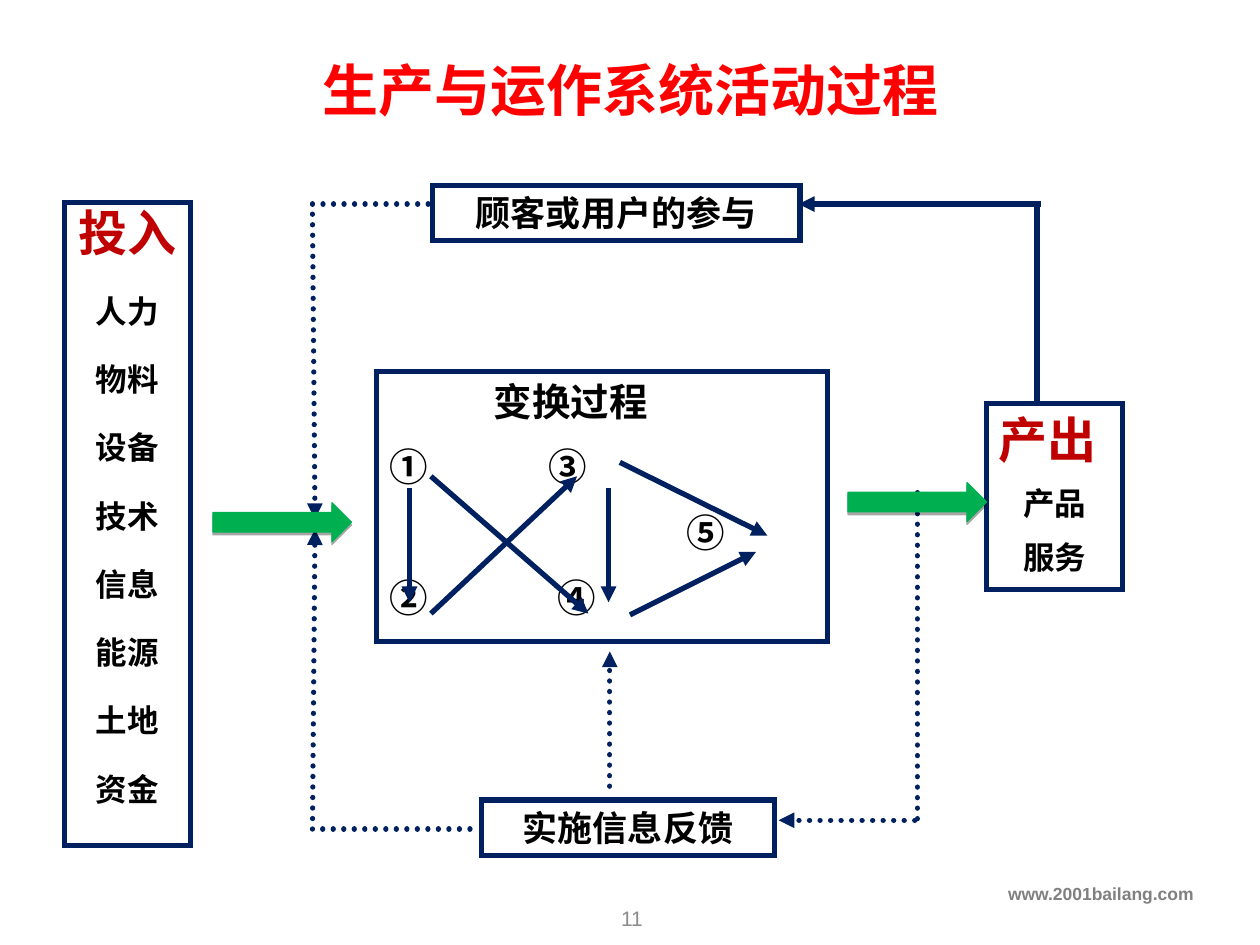
from lxml import etree
from pptx import Presentation
from pptx.dml.color import RGBColor
from pptx.enum.dml import MSO_LINE
from pptx.enum.shapes import MSO_CONNECTOR, MSO_SHAPE
from pptx.enum.text import MSO_ANCHOR, PP_ALIGN
from pptx.oxml.ns import qn
from pptx.util import Inches, Pt

LEFT, CENTER, RIGHT = PP_ALIGN.LEFT, PP_ALIGN.CENTER, PP_ALIGN.RIGHT
TOP, MIDDLE = MSO_ANCHOR.TOP, MSO_ANCHOR.MIDDLE
RECTANGLE, RIGHT_ARROW = MSO_SHAPE.RECTANGLE, MSO_SHAPE.RIGHT_ARROW
STRAIGHT = MSO_CONNECTOR.STRAIGHT
DOTTED = MSO_LINE.ROUND_DOT

SANS, CJK = "Arial", "Noto Sans CJK SC"
THEME = {
    "frame": "002060",
    "flow": "00B050",
    "shadow": "000000",
    "frame_width": 3,
    "flow_width": 0.75,
    # style: font, size, colour, bold
    "title": (CJK, 32, "FF0000", True),
    "heading": (SANS, 28, "C00000", True),
    "item": (CJK, 18, "000000", True),
    "label": (CJK, 20, "000000", True),
    "process": (CJK, 22, "000000", True),
    "website": (SANS, 10, "808080", True),
    "page": (SANS, 12, "8C8C8C", False),
}

# Paragraph: text, style, alignment, then optional indent in inches
INPUTS = ["人力", "物料", "设备", "技术", "信息", "能源", "土地", "资金"]
OUTPUTS = ["产品", "服务"]

# Frame: left, top, width, height, paragraphs, line spacing
FRAMES = [
    (0.51, 1.61, 1, 5.1,
     [("投入", "heading", CENTER)] + [(name, "item", CENTER) for name in INPUTS], 30),
    (3.43, 1.47, 2.92, 0.44, [("顾客或用户的参与", "label", CENTER)], None),
    (3.82, 6.35, 2.33, 0.44, [("实施信息反馈", "label", CENTER)], None),
    (7.83, 3.2, 1.08, 1.48,
     [("产出", "heading", LEFT)] + [(name, "item", CENTER) for name in OUTPUTS], None),
    (2.99, 2.95, 3.58, 2.14, [("变换过程", "process", LEFT, 0.83)], None),
]
ITEM_GAP = 9

# Step: number, centre x, row
STEPS = [("①", 3.24, 0), ("②", 3.24, 2), ("③", 4.51, 0), ("④", 4.58, 2), ("⑤", 5.6, 1)]
FIRST_ROW, ROW_PITCH = 3.7, 0.52
STEP_WIDTH, STEP_HEIGHT = 0.6, 0.5

# Caption: left, top, width, height, paragraph, anchor
CAPTIONS = [
    (2.25, 0.39, 5.51, 0.64, ("生产与运作系统活动过程", "title", CENTER), TOP),
    (0, 6.96, 9.57, 0.35, ("www.2001bailang.com", "website", RIGHT), TOP),
    (3.89, 7.09, 2.25, 0.4, ("11", "page", CENTER), MIDDLE),
]

# Line: start, end, has an arrowhead
FEEDBACK_LINES = [
    ((4.84, 6.24), (4.84, 5.17), True),
    ((3.73, 6.58), (2.48, 6.58), False),
    ((2.48, 6.58), (2.5, 4.2), True),
    ((2.48, 1.7), (2.5, 4.12), True),
    ((7.28, 3.91), (7.28, 6.57), False),
    ((7.26, 6.51), (6.18, 6.51), True),
    ((2.48, 1.62), (3.4, 1.62), False),
]
CUSTOMER_LINES = [
    ((8.23, 3.2), (8.23, 1.62), False),
    ((8.26, 1.62), (6.34, 1.62), True),
]
STEP_LINES = [
    ((3.25, 3.87), (3.25, 4.78), True),
    ((4.83, 3.87), (4.83, 4.78), True),
    ((3.42, 3.78), (4.67, 4.87), True),
    ((3.42, 4.87), (4.58, 3.78), True),
    ((4.92, 3.67), (6.09, 4.25), True),
    ((5, 4.88), (6, 4.38), True),
]
FLOW_ARROWS = [(1.69, 3.99), (6.73, 3.83)]
FLOW_SIZE = (1.1, 0.31)


def colour(name):
    return RGBColor.from_string(THEME[name])


def add_run(paragraph, text, style):
    face, size, rgb, bold = THEME[style]
    run = paragraph.add_run()
    run.text = text
    run.font.size, run.font.bold, run.font.name = Pt(size), bold, face
    run.font.color.rgb = RGBColor.from_string(rgb)
    etree.SubElement(run.font._element, qn("a:ea"), typeface=CJK)


def fill_text(text_frame, paragraphs, anchor=TOP, line_spacing=None):
    text_frame.word_wrap = True
    text_frame.vertical_anchor = anchor
    for i, (text, style, alignment, *indent) in enumerate(paragraphs):
        paragraph = text_frame.add_paragraph() if i else text_frame.paragraphs[0]
        paragraph.alignment = alignment
        paragraph.space_before = Pt(ITEM_GAP if i else 0)
        if line_spacing:
            paragraph.line_spacing = Pt(line_spacing)
        if indent:
            paragraph._p.get_or_add_pPr().set("marL", str(Inches(indent[0])))
        add_run(paragraph, text, style)


def add_caption(slide, left, top, width, height, paragraph, anchor):
    caption = slide.shapes.add_textbox(*map(Inches, (left, top, width, height)))
    fill_text(caption.text_frame, [paragraph], anchor)


def add_step(slide, number, center_x, row):
    center_y = FIRST_ROW + row * ROW_PITCH
    add_caption(slide, center_x - STEP_WIDTH / 2, center_y - STEP_HEIGHT / 2,
                STEP_WIDTH, STEP_HEIGHT, (number, "process", CENTER), MIDDLE)


def style_stroke(line):
    """Give the frame colour and width, and return the line's XML element."""
    line.color.rgb = colour("frame")
    line.width = Pt(THEME["frame_width"])
    return line._get_or_add_ln()


def add_frame(slide, left, top, width, height, paragraphs, line_spacing):
    frame = slide.shapes.add_shape(RECTANGLE, *map(Inches, (left, top, width, height)))
    frame.shadow.inherit = False
    frame.fill.background()
    etree.SubElement(style_stroke(frame.line), qn("a:miter"), lim="800000")
    fill_text(frame.text_frame, paragraphs, TOP, line_spacing)


def add_line(slide, start, end, has_head, dash=None):
    connector = slide.shapes.add_connector(STRAIGHT, *map(Inches, start + end))
    stroke = style_stroke(connector.line)
    if dash:
        connector.line.dash_style = dash
        stroke.set("cap", "rnd")
    if has_head:
        etree.SubElement(stroke, qn("a:tailEnd"), type="triangle")
    etree.SubElement(connector._element.spPr, qn("a:effectLst"))


def add_flow_arrow(slide, left, top):
    arrow = slide.shapes.add_shape(RIGHT_ARROW, *map(Inches, (left, top) + FLOW_SIZE))
    arrow.fill.solid()
    arrow.fill.fore_color.rgb = colour("flow")
    arrow.line.color.rgb = colour("flow")
    arrow.line.width = Pt(THEME["flow_width"])
    arrow.shadow.inherit = False
    effects = arrow._element.spPr.find(qn("a:effectLst"))
    shadow = etree.SubElement(effects, qn("a:outerShdw"), blurRad="0",
                              dist=str(Pt(1.6)), dir="5400000", rotWithShape="0")
    shade = etree.SubElement(shadow, qn("a:srgbClr"), val=THEME["shadow"])
    etree.SubElement(shade, qn("a:alpha"), val="34000")


def main():
    deck = Presentation()
    deck.slide_width, deck.slide_height = Inches(10), Inches(7.5)
    slide = deck.slides.add_slide(deck.slide_layouts[6])
    for frame in FRAMES:
        add_frame(slide, *frame)
    for step in STEPS:
        add_step(slide, *step)
    for line in FEEDBACK_LINES:
        add_line(slide, *line, dash=DOTTED)
    for line in CUSTOMER_LINES + STEP_LINES:
        add_line(slide, *line)
    for caption in CAPTIONS:
        add_caption(slide, *caption)
    for position in FLOW_ARROWS:
        add_flow_arrow(slide, *position)
    deck.save("out.pptx")


if __name__ == "__main__":
    main()
